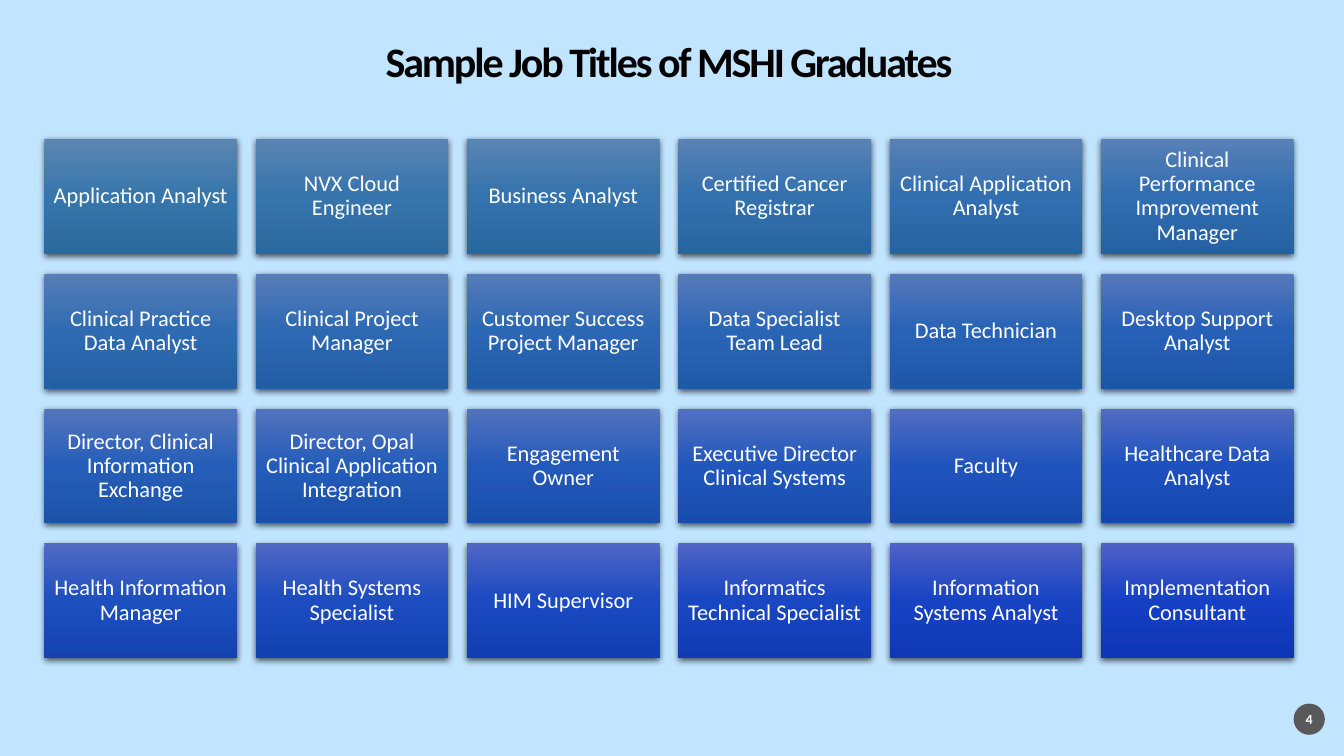
from colorsys import hls_to_rgb, rgb_to_hls
from copy import deepcopy
from dataclasses import dataclass

from lxml.etree import SubElement
from pptx import Presentation
from pptx.dml.color import RGBColor
from pptx.enum.shapes import MSO_SHAPE
from pptx.enum.text import MSO_ANCHOR, MSO_AUTO_SIZE, PP_ALIGN
from pptx.oxml.ns import qn
from pptx.util import Pt

PX = 9144  # one hundredth of an inch in EMU


@dataclass(frozen=True)
class Theme:
    font: str = "Calibri"
    background: str = "C1E4FF"
    title: str = "000000"
    text: str = "FFFFFF"
    badge: str = "595959"
    shadow: str = "000000"
    # Top, middle and bottom gradient colours of the first and last cards
    first_card: tuple = ("5B86B2", "3776AB", "2C6A9D")
    last_card: tuple = ("4E60C7", "1640C4", "0D35B5")
    title_size: int = 30
    card_size: int = 16
    badge_size: int = 10


JOB_TITLES = [
    ["Application Analyst", "NVX Cloud Engineer", "Business Analyst",
     "Certified Cancer Registrar", "Clinical Application Analyst",
     "Clinical Performance Improvement Manager"],
    ["Clinical Practice Data Analyst", "Clinical Project Manager",
     "Customer Success Project Manager", "Data Specialist Team Lead",
     "Data Technician", "Desktop Support Analyst"],
    ["Director, Clinical Information Exchange",
     "Director, Opal Clinical Application Integration", "Engagement Owner",
     "Executive Director Clinical Systems", "Faculty",
     "Healthcare Data Analyst"],
    ["Health Information Manager", "Health Systems Specialist",
     "HIM Supervisor", "Informatics Technical Specialist",
     "Information Systems Analyst", "Implementation Consultant"],
]


def blend(start, end, share):
    """Mix two hex colours by hue, lightness and saturation."""
    ends = [rgb_to_hls(*(part / 255 for part in RGBColor.from_string(colour)))
            for colour in (start, end)]
    mixed = [a + (b - a) * share for a, b in zip(*ends)]
    return RGBColor(*(round(part * 255) for part in hls_to_rgb(*mixed)))


def style(target, formats):
    for name, value in formats.items():
        setattr(target, name, value)


class SlideBuilder:
    def __init__(self, page, theme):
        self.page = page
        self.theme = theme
        page.background.fill.solid()
        page.background.fill.fore_color.rgb = RGBColor.from_string(theme.background)

    def place(self, shape, left, top, width, height):
        bounds = dict(left=left, top=top, width=width, height=height)
        style(shape, {name: round(value * PX) for name, value in bounds.items()})

    def add_words(self, shape, words, size, colour, inset=0, bold=False, spacing=0.9):
        frame = shape.text_frame
        margins = ("margin_left", "margin_top", "margin_right", "margin_bottom")
        style(frame, dict.fromkeys(margins, inset * PX))
        style(frame, {"word_wrap": True, "auto_size": MSO_AUTO_SIZE.NONE,
                      "vertical_anchor": MSO_ANCHOR.MIDDLE})
        para = frame.paragraphs[0]
        style(para, {"alignment": PP_ALIGN.CENTER, "line_spacing": spacing})
        span = para.add_run()
        span.text = words
        style(span.font, {"name": self.theme.font, "size": Pt(size), "bold": bold})
        span.font.color.rgb = RGBColor.from_string(colour)
        return span

    def title(self, words, *bounds):
        box = self.page.shapes.title
        self.place(box, *bounds)
        span = self.add_words(box, words, self.theme.title_size, self.theme.title,
                              bold=True)
        span.font._element.set("spc", "-150")

    def shape(self, kind, *bounds):
        shape = self.page.shapes.add_shape(kind, 0, 0, 0, 0)
        self.place(shape, *bounds)
        shape.line.fill.background()
        shape.shadow.inherit = False
        return shape

    def badge(self, words, *bounds):
        circle = self.shape(MSO_SHAPE.OVAL, *bounds)
        circle.fill.solid()
        circle.fill.fore_color.rgb = RGBColor.from_string(self.theme.badge)
        self.add_words(circle, words, self.theme.badge_size, self.theme.text,
                       bold=True, spacing=1.0)

    def card(self, words, share, *bounds):
        card = self.shape(MSO_SHAPE.RECTANGLE, *bounds)
        self.shade(card, share)
        self.cast_shadow(card)
        self.add_words(card, words, self.theme.card_size, self.theme.text, inset=7)

    def shade(self, card, share):
        card.fill.gradient()
        card.fill.gradient_angle = 270
        stop_list = card._element.spPr.find(".//" + qn("a:gsLst"))
        stop_list.insert(1, deepcopy(stop_list[0]))
        colours = zip(self.theme.first_card, self.theme.last_card)
        for stop, position, pair in zip(card.fill.gradient_stops, (0, 0.5, 1), colours):
            stop.position = position
            stop.color.rgb = blend(*pair, share)

    def cast_shadow(self, card):
        effects = card._element.spPr.find(qn("a:effectLst"))
        shadow = SubElement(effects, qn("a:outerShdw"), blurRad=str(Pt(4.5)),
                            dist=str(Pt(1.5)), dir="5400000", rotWithShape="0")
        colour = SubElement(shadow, qn("a:srgbClr"), val=self.theme.shadow)
        SubElement(colour, qn("a:alpha"), val="63000")

    def card_grid(self, rows, left, top, right, bottom, width, height):
        """Spread equal cards over the area, shading from first to last."""
        columns = len(rows[0])
        step_x = (right - left - width) / (columns - 1)
        step_y = (bottom - top - height) / (len(rows) - 1)
        last = len(rows) * columns - 1
        for row, titles in enumerate(rows):
            for column, words in enumerate(titles):
                self.card(words, (row * columns + column) / last,
                          left + column * step_x, top + row * step_y, width, height)


def main():
    deck = Presentation()
    style(deck, {"slide_width": 1333 * PX, "slide_height": 750 * PX})
    page = deck.slides.add_slide(deck.slide_layouts.get_by_name("Title Only"))
    builder = SlideBuilder(page, Theme())

    # Heading and page number
    builder.title("Sample Job Titles of MSHI Graduates", 44, 40, 1239, 47)
    builder.badge("4", 1283, 698, 31, 31)

    # Job title cards
    builder.card_grid(JOB_TITLES, left=44, top=138, right=1283, bottom=653,
                      width=191, height=114)
    deck.save("out.pptx")


if __name__ == "__main__":
    main()
